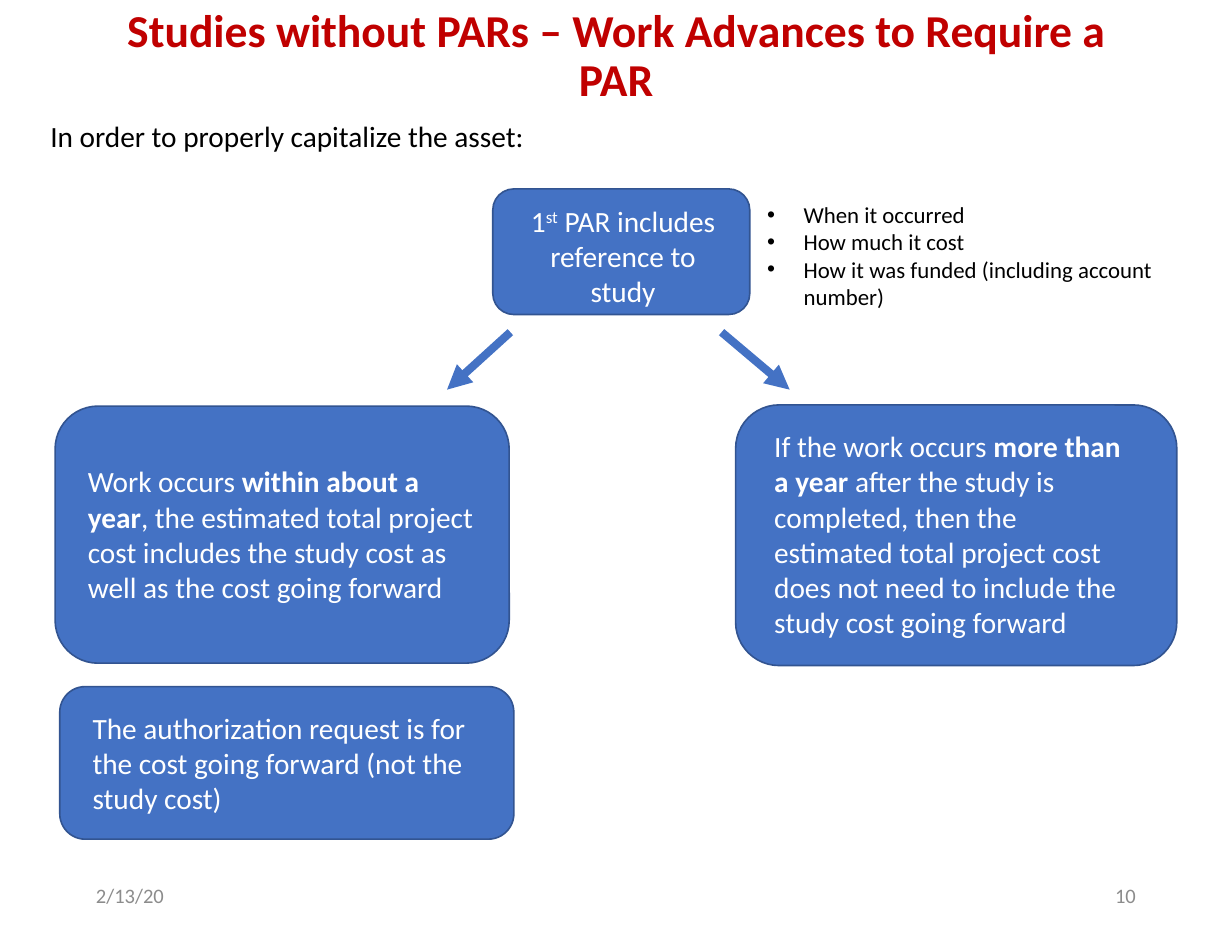
from lxml.etree import SubElement
from pptx import Presentation
from pptx.dml.color import RGBColor
from pptx.enum.shapes import MSO_CONNECTOR, MSO_SHAPE
from pptx.enum.text import MSO_ANCHOR, MSO_AUTO_SIZE, PP_ALIGN
from pptx.oxml.ns import qn
from pptx.util import Inches, Pt

COLORS = {"title": "C00000", "body": "000000", "box": "4472C4",
          "outline": "325491", "on_box": "FFFFFF", "footer": "8C8C8C"}


class FlowSlide:
    """Holds the deck's style and draws elements on the current slide."""

    font = "Calibri"
    body_size = 18

    def __init__(self, slide):
        self.slide = slide

    def color(self, name):
        return RGBColor.from_string(COLORS[name])

    def text(self, frame, paragraphs, color="body", size=body_size, align=PP_ALIGN.LEFT,
             anchor=MSO_ANCHOR.TOP, bold=False, bullet=False, spacing=None, grow=True):
        label = self.slide.shapes.add_textbox(*map(Inches, frame))
        body = label.text_frame
        body.word_wrap = True
        body.auto_size = MSO_AUTO_SIZE.SHAPE_TO_FIT_TEXT if grow else MSO_AUTO_SIZE.NONE
        body.vertical_anchor = anchor
        for index, pieces in enumerate(paragraphs):
            paragraph = body.add_paragraph() if index else body.paragraphs[0]
            paragraph.alignment = align
            paragraph.line_spacing = spacing
            if bullet:
                self.bullet(paragraph)
            for wording, style in pieces:
                run = paragraph.add_run()
                run.text = wording
                run.font.name = self.font
                run.font.size = Pt(size)
                run.font.bold = bold or style == "bold"
                run.font.color.rgb = self.color(color)
                if style == "super":
                    run._r.get_or_add_rPr().set("baseline", "30000")

    def bullet(self, paragraph):
        properties = paragraph._p.get_or_add_pPr()
        indent = Inches(0.31)
        properties.set("marL", str(indent))
        properties.set("indent", str(-indent))
        SubElement(properties, qn("a:buFont")).set("typeface", "Arial")
        SubElement(properties, qn("a:buChar")).set("char", "•")

    def box(self, frame):
        step = self.slide.shapes.add_shape(MSO_SHAPE.ROUNDED_RECTANGLE, *map(Inches, frame))
        step.shadow.inherit = False
        step.fill.solid()
        step.fill.fore_color.rgb = self.color("box")
        step.line.color.rgb = self.color("outline")
        step.line.width = Pt(1)

    def arrow(self, start, end):
        branch = self.slide.shapes.add_connector(
            MSO_CONNECTOR.STRAIGHT, *map(Inches, start + end))
        branch.line.color.rgb = self.color("box")
        branch.line.width = Pt(5)
        SubElement(branch.line._get_or_add_ln(), qn("a:tailEnd")).set("type", "triangle")
        SubElement(branch._element.spPr, qn("a:effectLst"))


def main():
    deck = Presentation()
    deck.slide_width, deck.slide_height = Inches(10.5), Inches(8)
    page = FlowSlide(deck.slides.add_slide(deck.slide_layouts[6]))

    page.text((0.72, 0.15, 9.06, 0.68),
              [[("Studies without PARs – Work Advances to Require a PAR", "")]],
              "title", 28, PP_ALIGN.CENTER, MSO_ANCHOR.MIDDLE, bold=True,
              spacing=0.9, grow=False)
    for left, wording, align in ((0.72, "2/13/20", PP_ALIGN.LEFT),
                                 (7.42, "10", PP_ALIGN.RIGHT)):
        page.text((left, 7.41, 2.36, 0.43), [[(wording, "")]], "footer", 12.6,
                  align, MSO_ANCHOR.MIDDLE, grow=False)

    steps = (
        ((4.2, 1.61, 2.19, 1.07), (4.35, 1.68, 1.92, 1.01), PP_ALIGN.CENTER,
         [("1", ""), ("st", "super"), (" PAR includes reference to study", "")]),
        ((0.47, 3.46, 3.87, 2.19), (0.65, 3.9, 3.51, 1.31), PP_ALIGN.LEFT,
         [("Work occurs ", ""), ("within about a year", "bold"),
          (", the estimated total project cost includes the study cost as well as "
           "the cost going forward", "")]),
        ((6.27, 3.45, 3.76, 2.22), (6.5, 3.6, 3.3, 1.92), PP_ALIGN.LEFT,
         [("If the work occurs ", ""), ("more than a year", "bold"),
          (" after the study is completed, then the estimated total project cost "
           "does not need to include the study cost going forward", "")]),
        ((0.51, 5.85, 3.87, 1.3), (0.69, 6, 3.51, 1.01), PP_ALIGN.LEFT,
         [("The authorization request is for the cost going forward "
           "(not the study cost)", "")]),
    )
    for box_frame, text_frame, align, pieces in steps:
        page.box(box_frame)
        page.text(text_frame, [pieces], "on_box", align=align)

    references = ("When it occurred", "How much it cost",
                  "How it was funded (including account number)")
    page.text((6.44, 1.66, 3.88, 1.04), [[(item, "")] for item in references],
              size=14, bullet=True)

    for start_x, end_x in ((4.35, 3.81), (6.15, 6.73)):
        page.arrow((start_x, 2.83), (end_x, 3.32))
    page.text((0.33, 0.96, 5.79, 0.4),
              [[("In order to properly capitalize the asset:", "")]])

    deck.save("out.pptx")


if __name__ == "__main__":
    main()
